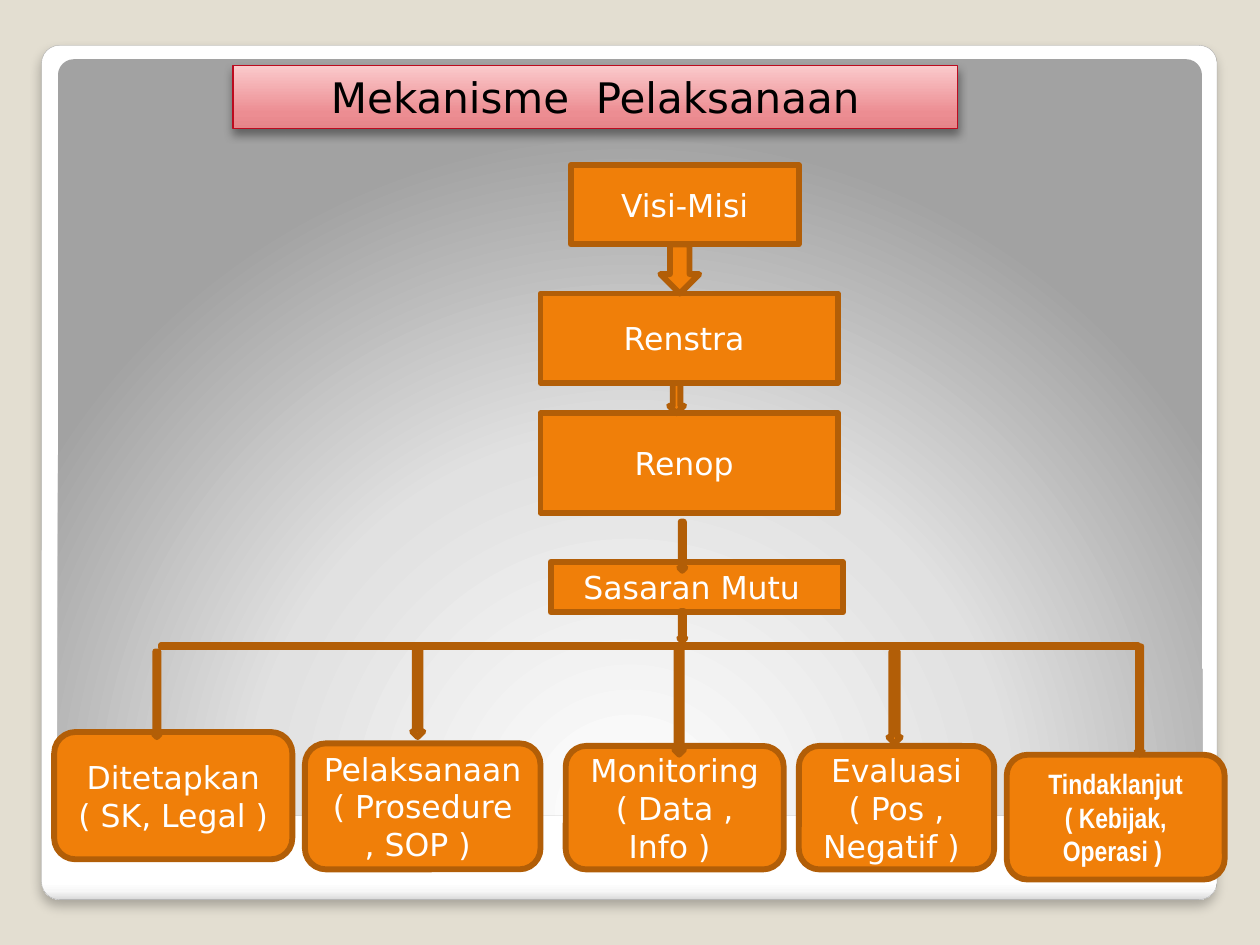
from pptx import Presentation
from pptx.dml.color import RGBColor
from pptx.enum.shapes import MSO_SHAPE
from pptx.enum.text import MSO_ANCHOR, MSO_AUTO_SIZE, PP_ALIGN
from pptx.oxml import parse_xml
from pptx.oxml.ns import nsdecls, qn
from pptx.util import Inches, Pt

RECT = MSO_SHAPE.RECTANGLE
ROUND = MSO_SHAPE.ROUNDED_RECTANGLE
DOWN = MSO_SHAPE.DOWN_ARROW
MINUS = MSO_SHAPE.MATH_MINUS
CENTER = PP_ALIGN.CENTER
TOP, MIDDLE = MSO_ANCHOR.TOP, MSO_ANCHOR.MIDDLE
GROW, FIXED = MSO_AUTO_SIZE.SHAPE_TO_FIT_TEXT, MSO_AUTO_SIZE.NONE

SAND = RGBColor(0xE3, 0xDE, 0xD1)
ORANGE = RGBColor(0xF0, 0x7F, 0x09)
BROWN = RGBColor(0xB2, 0x5E, 0x07)
RED = RGBColor(0xBC, 0x0B, 0x1F)
GRAY = RGBColor(0xA4, 0xA4, 0xA4)
WHITE = RGBColor(0xFF, 0xFF, 0xFF)
BLACK = RGBColor(0, 0, 0)

FRAME = [(0, WHITE), (98, WHITE), (99, RGBColor(0xF7, 0xF7, 0xF7)),
         (100, RGBColor(0xDA, 0xDA, 0xDA))]
GLOW = [(0, WHITE), (55, RGBColor(0xE1, 0xE1, 0xE1)),
        (100, RGBColor(0xA2, 0xA2, 0xA2))]
PINK = [(0, RGBColor(0xE6, 0x85, 0x89)), (25, RGBColor(0xEC, 0x8D, 0x92)),
        (100, RGBColor(0xFB, 0xCA, 0xCC))]
RADIAL = ('<a:path path="circle"><a:fillToRect l="50000" t="175000" '
          'r="50000" b="-75000"/></a:path>')

STEPS = [
    ("Visi-Misi", 4.53, 1.31, 1.81, 0.63),
    ("Renstra ", 4.29, 2.33, 2.36, 0.71),
    ("Renop ", 4.29, 3.28, 2.36, 0.79),
]
TASKS = [
    ("Ditetapkan\n( SK, Legal )", 0.43, 5.81, 1.89, 1.01),
    ("Pelaksanaan\n( Prosedure , SOP ) ", 2.42, 5.9, 1.87, 1),
    ("Monitoring\n( Data , Info ) ", 4.49, 5.92, 1.73, 0.98),
    ("Evaluasi\n( Pos , Negatif ) ", 6.34, 5.92, 1.55, 0.98),
]
LAST = ("Tindaklanjut\n( Kebijak, Operasi ) ", 7.99, 5.99, 1.73, 0.99)
ARROWS = [
    (5.24, 1.94, 0.31, 0.39), (5.39, 4.14, 0.05, 0.39),
    (5.31, 3.04, 0.12, 0.24), (9.02, 5.13, 0.05, 0.86),
    (7.05, 5.17, 0.1, 0.73), (5.35, 5.13, 0.08, 0.86),
    (1.22, 5.17, 0.05, 0.68), (3.27, 5.13, 0.09, 0.72),
    (5.39, 4.85, 0.05, 0.24),
]


def add_shape(slide, kind, box):
    """Add a shape without shadow."""
    shape = slide.shapes.add_shape(kind, *map(Inches, box))
    shape.shadow.inherit = False
    return shape


def set_line(shape, color, width):
    """Set the outline."""
    shape.line.color.rgb = color
    shape.line.width = Pt(width)


def set_blend(shape, stops, way):
    """Fill a shape with a gradient."""
    marks = "".join(
        f'<a:gs pos="{pos * 1000}"><a:srgbClr val="{color}"/></a:gs>'
        for pos, color in stops)
    shape.fill.background()
    old = shape.element.spPr.find(qn("a:noFill"))
    old.getparent().replace(old, parse_xml(
        f'<a:gradFill {nsdecls("a")} rotWithShape="1">'
        f'<a:gsLst>{marks}</a:gsLst>{way}</a:gradFill>'))


def linear(angle):
    """Give the direction of a linear gradient."""
    return f'<a:lin ang="{angle * 60000}" scaled="0"/>'


def add_shadow(shape, alpha, blur, dist):
    """Cast a black shadow downwards."""
    shape.shadow.inherit = False
    shape.element.spPr.find(qn("a:effectLst")).append(parse_xml(
        f'<a:outerShdw {nsdecls("a")} blurRad="{Pt(blur)}" '
        f'dist="{Pt(dist)}" dir="5400000" rotWithShape="0">'
        f'<a:srgbClr val="000000"><a:alpha val="{alpha * 1000}"/>'
        '</a:srgbClr></a:outerShdw>'))


def set_text(shape, text, color, size, font="DejaVu Sans", bold=False,
             anchor=MIDDLE):
    """Write centred text into a shape."""
    frame = shape.text_frame
    frame.text = text
    frame.word_wrap = True
    frame.vertical_anchor = anchor
    for par in frame.paragraphs:
        par.alignment = CENTER
        par.font.name = font
        par.font.size = Pt(size)
        par.font.bold = bold
        par.font.color.rgb = color


def add_part(slide, kind, box):
    """Add an orange part of the chart."""
    shape = add_shape(slide, kind, box)
    shape.fill.solid()
    shape.fill.fore_color.rgb = ORANGE
    set_line(shape, BROWN, 3.35)
    return shape


def add_panel(slide):
    """Add the white frame and the gray panel."""
    frame = add_shape(slide, ROUND, (0.33, 0.36, 9.33, 6.78))
    set_blend(frame, FRAME, linear(90))
    set_line(frame, GRAY, 0.16)
    add_shadow(frame, 25, 6, 4)
    panel = add_shape(slide, ROUND, (0.46, 0.47, 9.08, 6))
    set_blend(panel, GLOW, RADIAL)
    panel.line.fill.background()
    for shape in (frame, panel):
        shape.adjustments[0] = 0.021


def add_title(slide):
    """Format the title and bring it to the front."""
    title = slide.shapes.title
    title.left, title.top = Inches(1.85), Inches(0.52)
    title.width, title.height = Inches(5.75), Inches(0.5)
    set_blend(title, PINK, linear(270))
    set_line(title, RED, 0.75)
    add_shadow(title, 40, 5.2, 3)
    set_text(title, "Mekanisme  Pelaksanaan", BLACK, 24, anchor=TOP)
    title.text_frame.auto_size = FIXED
    slide.shapes.element.append(title.element)


def main():
    """Build the slide."""
    deck = Presentation()
    deck.slide_width, deck.slide_height = Inches(10), Inches(7.5)
    slide = deck.slides.add_slide(deck.slide_layouts[5])
    slide.background.fill.solid()
    slide.background.fill.fore_color.rgb = SAND
    add_panel(slide)
    for kind, group in ((RECT, STEPS), (ROUND, TASKS)):
        for text, *box in group:
            set_text(add_part(slide, kind, box), text, WHITE, 18)
    text, *box = LAST
    set_text(add_part(slide, ROUND, box), text, WHITE, 16, "Arial Narrow", True)
    goal = add_part(slide, RECT, (4.37, 4.46, 2.32, 0.4))
    set_text(goal, "Sasaran Mutu ", WHITE, 18, anchor=TOP)
    goal.text_frame.auto_size = GROW
    add_part(slide, MINUS, (-0.12, 5.09, 10.55, 0.08))
    for box in ARROWS:
        add_part(slide, DOWN, box)
    add_title(slide)
    deck.save("out.pptx")


if __name__ == "__main__":
    main()
